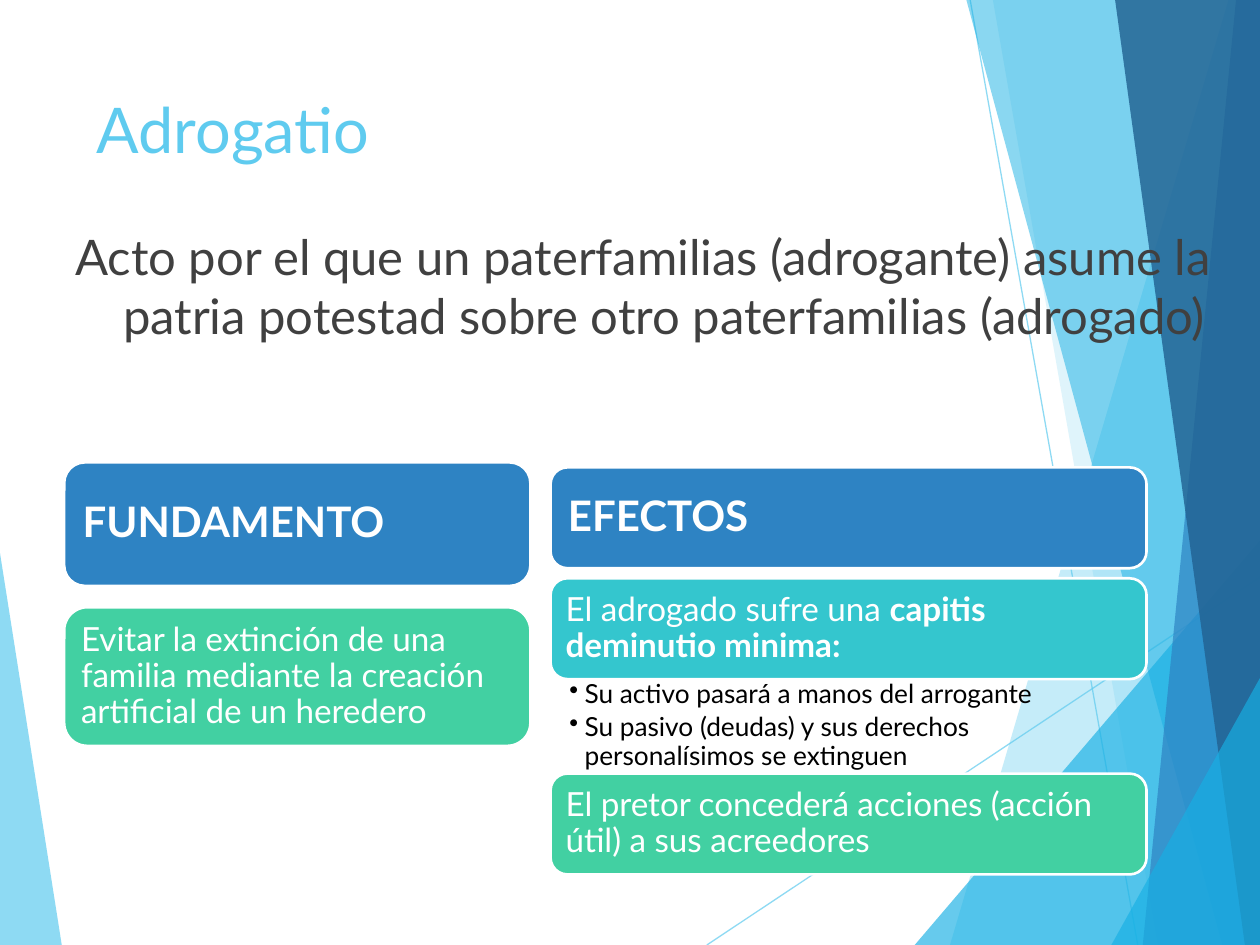
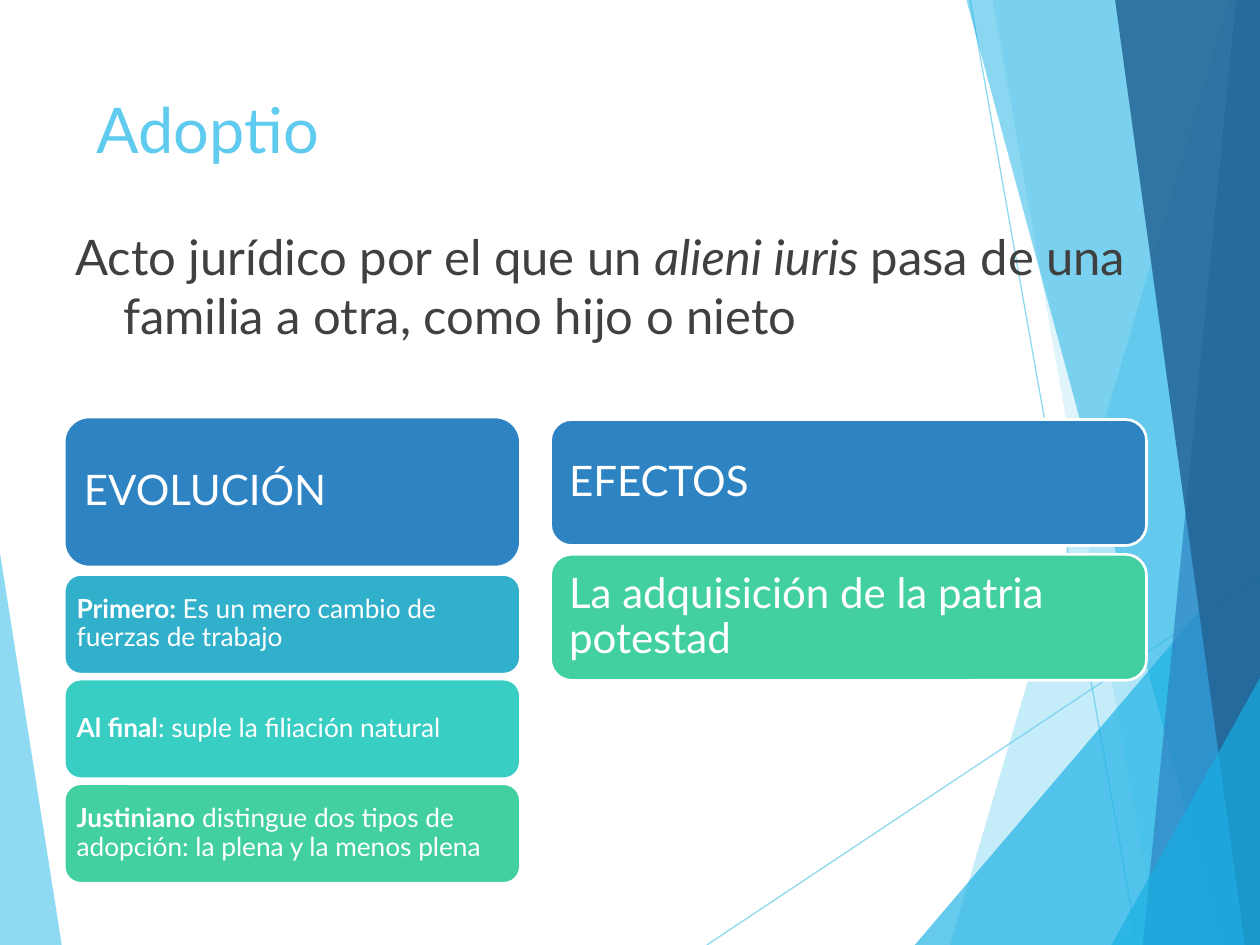
from dataclasses import dataclass

from lxml.etree import SubElement
from pptx import Presentation
from pptx.dml.color import RGBColor
from pptx.enum.shapes import MSO_CONNECTOR, MSO_SHAPE
from pptx.enum.text import MSO_ANCHOR, PP_ALIGN
from pptx.oxml.ns import qn
from pptx.util import Pt

PX = 9144  # EMU per px, 100 px to the inch


@dataclass(frozen=True)
class Theme:
    font: str = "Lato"
    white: str = "FFFFFF"
    black: str = "000000"
    ink: str = "404040"
    sky: str = "5FCBEF"
    cyan: str = "17B0E4"
    blue: str = "2E83C3"
    navy: str = "226292"
    teal: str = "31B0CB"
    turquoise: str = "34C6CE"
    aqua: str = "39CEC4"
    green: str = "42D0A2"
    title: int = 36
    definition: int = 28
    heading: int = 24
    card: int = 19
    small: int = 15


theme = Theme()
card_inset = {theme.heading: 10, theme.card: 8, theme.small: 6}


def write(shape, paragraphs, size, color, inset=(10, 5), anchor=MSO_ANCHOR.TOP,
          spacing=None, before=0, after=0, hanging=0, bullet=None):
    """Each paragraph is a list of (text, style) runs; style is "", "b" or "i"."""
    frame = shape.text_frame
    frame.word_wrap = True
    frame.vertical_anchor = anchor
    frame.margin_left = frame.margin_right = inset[0] * PX
    frame.margin_top = frame.margin_bottom = inset[1] * PX
    for index, runs in enumerate(paragraphs):
        para = frame.add_paragraph() if index else frame.paragraphs[0]
        para.alignment = PP_ALIGN.LEFT
        para.line_spacing = spacing
        para.space_before, para.space_after = Pt(before), Pt(after)
        properties = para._p.get_or_add_pPr()
        properties.set("marL", str(hanging * PX))
        properties.set("indent", str(-hanging * PX))
        if bullet:
            SubElement(properties, qn("a:buChar")).set("char", bullet)
        for text, style in runs:
            span = para.add_run()
            span.text = text
            span.font.name = theme.font
            span.font.size = Pt(size)
            span.font.color.rgb = RGBColor.from_string(color)
            span.font.bold = style == "b"
            span.font.italic = style == "i"


def set_opacity(shape, percent):
    for color in shape._element.spPr.iter(qn("a:srgbClr")):
        SubElement(color, qn("a:alpha")).set("val", str(percent * 1000))


# Background: thin lines and translucent facets, from back to front
left_facet = (theme.sky, 70, [(0, 439), (49, 750), (0, 750)])
rays = [((561, 750), (1000, 458)), ((770, 0), (903, 750))]
right_facets = [
    (theme.sky, 36, [(975, 0), (754, 750), (1000, 750), (1000, 0)]),
    (theme.sky, 20, [(788, 0), (919, 750), (1000, 750), (1000, 0)]),
    (theme.cyan, 66, [(726, 750), (1000, 429), (1000, 750)]),
    (theme.cyan, 50, [(767, 0), (970, 750), (1000, 750), (1000, 0)]),
    (theme.blue, 70, [(981, 0), (907, 750), (1000, 750), (1000, 0)]),
    (theme.navy, 82, [(885, 0), (988, 750), (1000, 750), (1000, 0)]),
    (theme.cyan, 66, [(882, 750), (1000, 538), (1000, 750)]),
]

# Content: a column is (left, top, width, cards),
# a card is (gap above, height, fill, text size, runs)
pages = [
    {
        "title": "Adrogatio",
        "definition": [("Acto por el que un paterfamilias (adrogante) asume la patria "
                        "potestad sobre otro paterfamilias (adrogado)", "")],
        "columns": [
            (51, 367, 370, [
                (0, 98, theme.blue, theme.heading, [("FUNDAMENTO", "b")]),
                (17, 110, theme.green, theme.card,
                 [("Evitar la extinción de una familia mediante la creación "
                   "artificial de un heredero", "")]),
            ]),
            (437, 371, 473, [
                (0, 80, theme.blue, theme.heading, [("EFECTOS", "b")]),
                (8, 80, theme.turquoise, theme.card,
                 [("El adrogado sufre una ", ""), ("capitis deminutio minima:", "b")]),
                (75, 80, theme.green, theme.card,
                 [("El pretor concederá acciones (acción útil) a sus acreedores", "")]),
            ]),
        ],
        "consequences": [
            [("Su activo pasará a manos del arrogante", "")],
            [("Su pasivo (deudas) y sus derechos personalísimos se extinguen", "")],
        ],
    },
    {
        "title": "Adoptio",
        "definition": [("Acto jurídico por el que un ", ""), ("alieni iuris", "i"),
                       (" pasa de una familia a otra, como hijo o nieto", "")],
        "columns": [
            (51, 331, 362, [
                (0, 119, theme.blue, theme.heading, [("EVOLUCIÓN", "")]),
                (6, 79, theme.teal, theme.small,
                 [("Primero: ", "b"), ("Es un mero cambio de fuerzas de trabajo", "")]),
                (4, 79, theme.aqua, theme.small,
                 [("Al final", "b"), (": suple la filiación natural", "")]),
                (4, 79, theme.green, theme.small,
                 [("Justiniano", "b"),
                  (" distingue dos tipos de adopción: la plena y la menos plena", "")]),
            ]),
            (437, 333, 473, [
                (0, 100, theme.blue, theme.heading, [("EFECTOS", "")]),
                (7, 100, theme.green, theme.heading,
                 [("La adquisición de la patria potestad", "")]),
            ]),
        ],
        "consequences": [],
    },
]

deck = Presentation()
deck.slide_width, deck.slide_height = 1000 * PX, 750 * PX

for content in pages:
    page = deck.slides.add_slide(deck.slide_layouts[6])
    shapes = page.shapes

    # Facets, with the rays just above the left one
    for facet_color, opacity, corners in [left_facet, *right_facets]:
        builder = shapes.build_freeform(*corners[0], scale=PX)
        builder.add_line_segments(corners[1:], close=True)
        facet = builder.convert_to_shape()
        facet.shadow.inherit = False
        facet.fill.solid()
        facet.fill.fore_color.rgb = RGBColor.from_string(facet_color)
        facet.line.fill.background()
        set_opacity(facet, opacity)
        if corners is left_facet[2]:
            for start, end in rays:
                ray = shapes.add_connector(
                    MSO_CONNECTOR.STRAIGHT, *[value * PX for value in start + end])
                ray.line.width = Pt(0.75)
                ray.line.color.rgb = RGBColor.from_string(theme.sky)
                set_opacity(ray, 70)
                SubElement(ray._element.spPr, qn("a:effectLst"))

    # Title and definition
    title = shapes.add_textbox(67 * PX, 67 * PX, 694 * PX, 144 * PX)
    write(title, [[(content["title"], "")]], theme.title, theme.sky)
    definition = shapes.add_textbox(50 * PX, 175 * PX, 930 * PX, 176 * PX)
    write(definition, [content["definition"]], theme.definition, theme.ink,
          before=10, hanging=38)

    # Columns of stacked cards
    for left, top, width, cards in content["columns"]:
        for gap, height, fill, size, runs in cards:
            top += gap
            card = shapes.add_shape(MSO_SHAPE.ROUNDED_RECTANGLE,
                                    left * PX, top * PX, width * PX, height * PX)
            card.shadow.inherit = False
            card.fill.solid()
            card.fill.fore_color.rgb = RGBColor.from_string(fill)
            card.line.color.rgb = RGBColor.from_string(theme.white)
            card.line.width = Pt(1.5)
            write(card, [runs], size, theme.white, inset=(card_inset[size],) * 2,
                  anchor=MSO_ANCHOR.MIDDLE, spacing=0.9)
            top += height

    # Bulleted consequences between two cards
    if content["consequences"]:
        box = shapes.add_textbox(437 * PX, 537 * PX, 473 * PX, 77 * PX)
        write(box, content["consequences"], theme.small, theme.black, inset=(15, 3),
              spacing=0.9, after=3, hanging=12, bullet="•")

deck.save("out.pptx")
